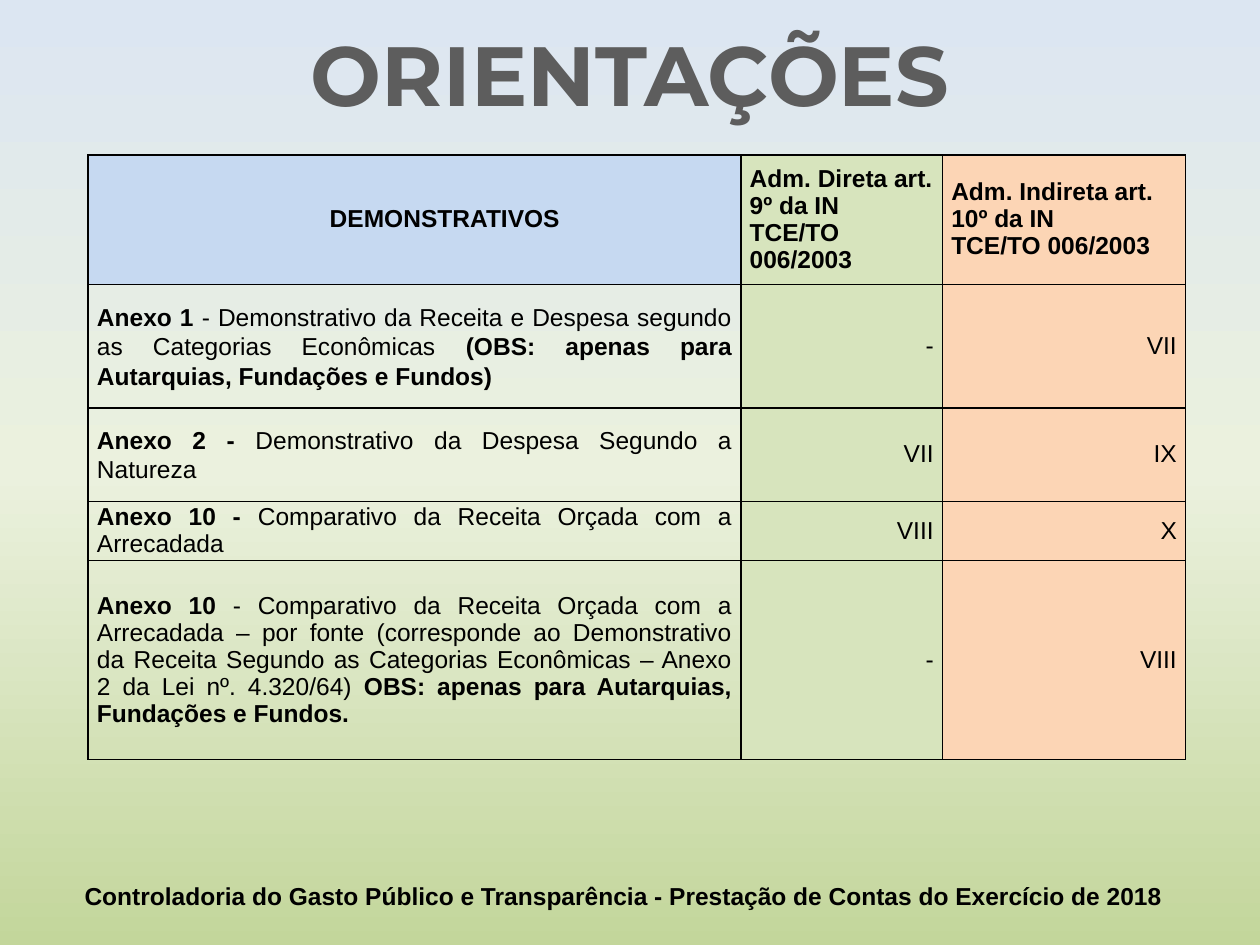
from copy import deepcopy

from lxml import etree
from pptx import Presentation
from pptx.dml.color import RGBColor
from pptx.enum import text
from pptx.oxml import ns
from pptx.util import Inches, Pt

BLACK = RGBColor(0x00, 0x00, 0x00)
GRAY = RGBColor(0x5D, 0x5D, 0x5D)
BLUE = RGBColor(0xC6, 0xD9, 0xF1)
GREEN = RGBColor(0xD7, 0xE4, 0xBD)
PEACH = RGBColor(0xFC, 0xD5, 0xB5)
SKY = RGBColor(0xDC, 0xE6, 0xF2)
PALE = RGBColor(0xEB, 0xF1, 0xDE)
GRASS = RGBColor(0xC3, 0xD6, 0x9B)

ALIGN = text.PP_ALIGN
MIDDLE = text.MSO_ANCHOR.MIDDLE
COLUMN_WIDTHS = [5.18, 1.6, 1.93]
ROW_HEIGHTS = [1.03, 0.98, 0.74, 0.47, 1.58]
HEADERS = [
    (["DEMONSTRATIVOS"], BLUE, ALIGN.CENTER, 0.48),
    (["Adm. Direta art. 9º da IN TCE/TO 006/2003"], GREEN, ALIGN.LEFT, 0),
    (["Adm. Indireta art. 10º da IN", "TCE/TO 006/2003"], PEACH, ALIGN.LEFT, 0),
]
ROWS = [
    ([("Anexo 1", True),
      (" - Demonstrativo da Receita e Despesa segundo as Categorias Econômicas ", False),
      ("(OBS: apenas para Autarquias, Fundações e Fundos)", True)],
     "-", "VII", 1.07),
    ([("Anexo 2 - ", True), ("Demonstrativo da Despesa Segundo a Natureza", False)],
     "VII", "IX", 1.07),
    ([("Anexo 10 - ", True),
      ("Comparativo da Receita Orçada com a Arrecadada", False)],
     "VIII", "X", 0.98),
    ([("Anexo 10", True),
      (" - Comparativo da Receita Orçada com a Arrecadada – por fonte "
       "(corresponde ao Demonstrativo da Receita Segundo as Categorias "
       "Econômicas – Anexo 2 da Lei nº. 4.320/64) ", False),
      ("OBS: apenas para Autarquias, Fundações e Fundos.", True)],
     "-", "VIII", 0.98),
]


def paint_background(page):
    fill = page.background.fill
    fill.gradient()
    fill.gradient_angle = 270
    stop_list = page.element.find(".//" + ns.qn("a:gsLst"))
    stop_list.append(deepcopy(stop_list[0]))
    for stop, color, position in zip(fill.gradient_stops, (SKY, PALE, GRASS), (0, 0.5, 1)):
        stop.color.rgb = color
        stop.position = position


def format_span(span, size=14, bold=True, color=BLACK, name="Arial"):
    span.font.size = Pt(size)
    span.font.bold = bold
    span.font.color.rgb = color
    span.font.name = name


def add_border(cell):
    properties = cell._tc.get_or_add_tcPr()
    for index, side in enumerate(("lnL", "lnR", "lnT", "lnB")):
        line = etree.Element(ns.qn("a:" + side), w=str(Pt(1)))
        fill = etree.SubElement(line, ns.qn("a:solidFill"))
        etree.SubElement(fill, ns.qn("a:srgbClr"), val=str(BLACK))
        properties.insert(index, line)


def fill_cell(cell, paragraphs, color, align, indent=0, spacing=0.98):
    cell.vertical_anchor = MIDDLE
    cell.margin_left = cell.margin_right = Inches(0.07)
    cell.margin_top = cell.margin_bottom = 0
    if color is None:
        cell.fill.background()
    else:
        cell.fill.solid()
        cell.fill.fore_color.rgb = color
    add_border(cell)
    frame = cell.text_frame
    for index, spans in enumerate(paragraphs):
        paragraph = frame.add_paragraph() if index else frame.paragraphs[0]
        paragraph.alignment = align
        paragraph.line_spacing = spacing
        if indent:
            paragraph._p.get_or_add_pPr().set("indent", str(Inches(indent)))
        for words, bold in spans:
            span = paragraph.add_run()
            span.text = words
            format_span(span, bold=bold)


def add_annex_table(page):
    table = page.shapes.add_table(
        len(ROW_HEIGHTS), len(COLUMN_WIDTHS), Inches(0.7), Inches(1.23),
        Inches(sum(COLUMN_WIDTHS)), Inches(sum(ROW_HEIGHTS))).table
    table.first_row = table.horz_banding = False
    for column, width in zip(table.columns, COLUMN_WIDTHS):
        column.width = Inches(width)
    for row, height in zip(table.rows, ROW_HEIGHTS):
        row.height = Inches(height)
    for column, (lines, color, align, indent) in enumerate(HEADERS):
        paragraphs = [[(line, True)] for line in lines]
        fill_cell(table.cell(0, column), paragraphs, color, align, indent)
    for row, (spans, direct, indirect, spacing) in enumerate(ROWS, 1):
        fill_cell(table.cell(row, 0), [spans], None, ALIGN.JUSTIFY, spacing=spacing)
        for column, value, color in ((1, direct, GREEN), (2, indirect, PEACH)):
            fill_cell(table.cell(row, column), [[(value, False)]], color, ALIGN.RIGHT, 0.48)


def set_title(page):
    title = page.shapes.title
    title.left, title.top = Inches(0.06), Inches(0.12)
    title.width, title.height = Inches(9.88), Inches(0.91)
    frame = title.text_frame
    frame.text = "ORIENTAÇÕES"
    frame.vertical_anchor = MIDDLE
    paragraph = frame.paragraphs[0]
    paragraph.alignment = ALIGN.CENTER
    format_span(paragraph.runs[0], 48, True, GRAY, "Montserrat")


def add_footer(page):
    box = page.shapes.add_textbox(Inches(0.55), Inches(6.94), Inches(8.78), Inches(0.34))
    frame = box.text_frame
    frame.word_wrap = True
    frame.text = ("Controladoria do Gasto Público e Transparência - "
                  "Prestação de Contas do Exercício de 2018")
    paragraph = frame.paragraphs[0]
    paragraph.alignment = ALIGN.RIGHT
    format_span(paragraph.runs[0])


def main():
    deck = Presentation()
    deck.slide_width, deck.slide_height = Inches(10), Inches(7.5)
    page = deck.slides.add_slide(deck.slide_layouts[5])
    paint_background(page)
    add_footer(page)
    add_annex_table(page)
    set_title(page)
    deck.save("out.pptx")


if __name__ == "__main__":
    main()
